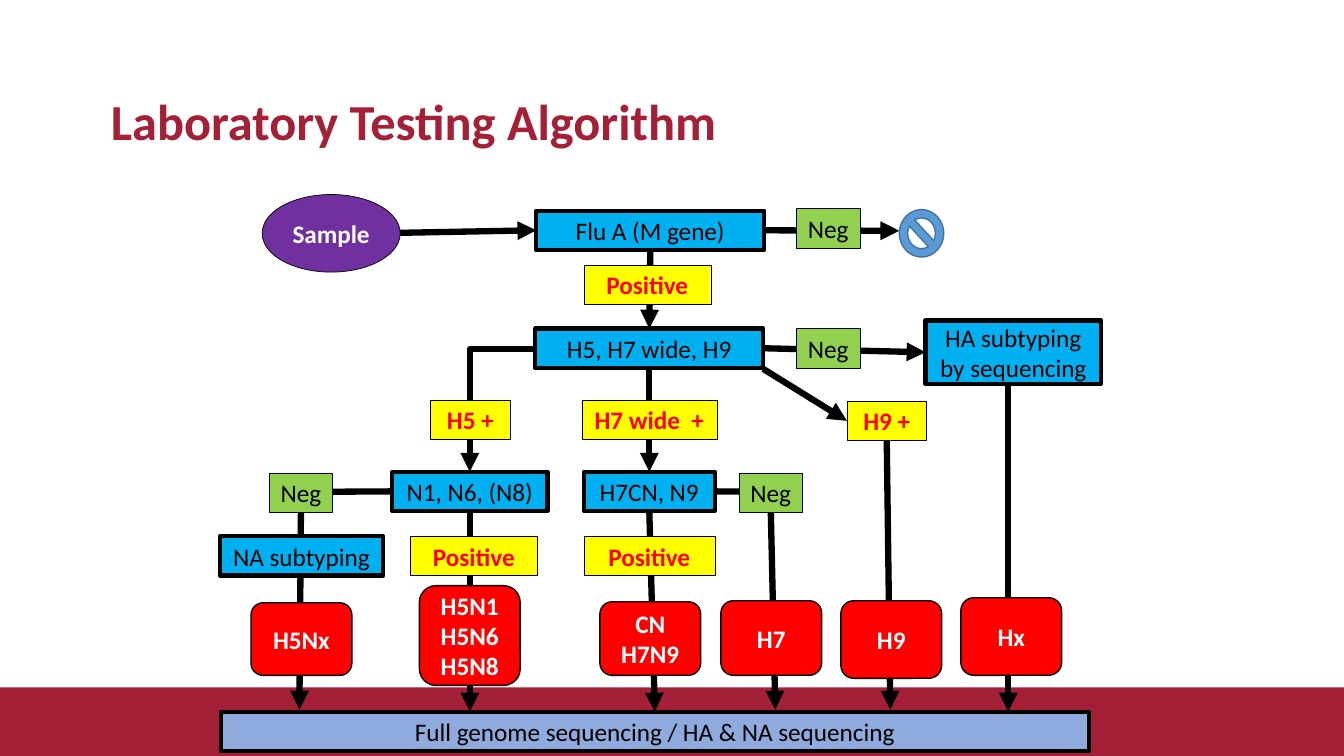
from lxml import etree
from pptx import Presentation
from pptx.dml.color import RGBColor
from pptx.enum.shapes import MSO_CONNECTOR as CONN, MSO_SHAPE as SHAPE
from pptx.enum.text import MSO_ANCHOR as ANCHOR, PP_ALIGN as ALIGN
from pptx.oxml.ns import qn
from pptx.util import Inches, Pt

CRIMSON = RGBColor(0xA4, 0x20, 0x36)
BLACK = RGBColor(0x00, 0x00, 0x00)
WHITE = RGBColor(0xFF, 0xFF, 0xFF)
RED = RGBColor(0xFF, 0x00, 0x00)
YELLOW = RGBColor(0xFF, 0xFF, 0x00)
GREEN = RGBColor(0x92, 0xD0, 0x50)
CYAN = RGBColor(0x00, 0xB0, 0xF0)
PERIWINKLE = RGBColor(0x8F, 0xAA, 0xDC)
PURPLE = RGBColor(0x70, 0x30, 0xA0)
BLUE = RGBColor(0x5B, 0x9B, 0xD5)
NAVY = RGBColor(0x43, 0x73, 0x9E)

TOP, LEFT, BOTTOM, RIGHT = range(4)
ROW_H = 0.39


def write(tf, text, size=18, color=BLACK, bold=False, align=ALIGN.CENTER, spacing=None):
    tf.word_wrap = True
    tf.vertical_anchor = ANCHOR.MIDDLE
    for i, line in enumerate(text.split("\n")):
        p = tf.paragraphs[0] if i == 0 else tf.add_paragraph()
        p.alignment = align
        p.line_spacing = spacing
        r = p.add_run()
        r.text = line
        r.font.name = "Calibri"
        r.font.size = Pt(size)
        r.font.bold = bold
        r.font.color.rgb = color


class FlowSlide:
    def __init__(self, prs):
        self.s = prs.slides.add_slide(prs.slide_layouts[5])
        self.band = self.shape(SHAPE.RECTANGLE, 0, 6.82, 13.33, 0.68, CRIMSON)

    def title(self, text):
        sp = self.s.shapes.title
        sp.left, sp.top, sp.width, sp.height = map(Inches, (1, 0.89, 9, 0.69))
        write(sp.text_frame, text, size=36, color=CRIMSON, bold=True,
              align=ALIGN.LEFT, spacing=0.9)

    def shape(self, kind, x, y, w, h, fill, line=None, width=1, text="", **fmt):
        sp = self.s.shapes.add_shape(kind, *map(Inches, (x, y, w, h)))
        sp.shadow.inherit = False
        sp.fill.solid()
        sp.fill.fore_color.rgb = fill
        if line is None:
            sp.line.fill.background()
        else:
            sp.line.color.rgb = line
            sp.line.width = Pt(width)
        if text:
            write(sp.text_frame, text, **fmt)
        return sp

    def test(self, text, x, y, w, h=ROW_H, fill=CYAN):
        return self.shape(SHAPE.RECTANGLE, x, y, w, h, fill, BLACK, 3, text)

    def positive(self, text, x, y, w):
        return self.shape(SHAPE.RECTANGLE, x, y, w, ROW_H, YELLOW, BLACK, 0.25, text,
                          color=RED, bold=True)

    def negative(self, x, y):
        return self.shape(SHAPE.RECTANGLE, x, y, 0.63, ROW_H, GREEN, BLACK, 0.25, "Neg")

    def result(self, text, x, y, h):
        return self.shape(SHAPE.ROUNDED_RECTANGLE, x, y, 1, h, RED, BLACK, 1, text,
                          color=WHITE, bold=True)

    def arrow(self, start, end, kind=CONN.STRAIGHT):
        points = [(0, 0) if hasattr(e[0], "shape_id") else e for e in (start, end)]
        c = self.s.shapes.add_connector(kind, *[Inches(v) for pt in points for v in pt])
        if hasattr(start[0], "shape_id"):
            c.begin_connect(*start)
        if hasattr(end[0], "shape_id"):
            c.end_connect(*end)
        c.line.color.rgb = BLACK
        c.line.width = Pt(4.5)
        etree.SubElement(c.line._get_or_add_ln(), qn("a:tailEnd"), type="triangle")
        etree.SubElement(c._element.spPr, qn("a:effectLst"))
        self.band._element.addnext(c._element)
        return c

    def elbow(self, start, end):
        c = self.arrow(start, end, CONN.ELBOW)
        c._element.spPr.find(qn("a:prstGeom")).set("prst", "bentConnector2")


def main():
    prs = Presentation()
    prs.slide_width, prs.slide_height = Inches(13.33), Inches(7.5)
    flow = FlowSlide(prs)
    flow.title("Laboratory Testing Algorithm")

    flow.shape(SHAPE.OVAL, 2.6, 1.93, 1.37, 0.77, PURPLE, BLACK, 0.5, "Sample",
               color=WHITE, bold=True)
    flow.shape(SHAPE.NO_SYMBOL, 8.92, 2.08, 0.44, 0.47, BLUE, NAVY)

    flu_a = flow.test("Flu A (M gene)", 5.32, 2.09, 2.26)
    h_types = flow.test("H5, H7 wide, H9", 5.31, 3.26, 2.26)
    n_types = flow.test("N1, N6, (N8)", 3.89, 4.68, 1.54)
    h7_types = flow.test("H7CN, N9", 5.79, 4.68, 1.3)
    flow.test("NA subtyping", 2.18, 5.32, 1.62)
    ha_subtyping = flow.test("HA subtyping\nby sequencing", 9.18, 3.18, 1.74, 0.63)
    genome = flow.test("Full genome sequencing / HA & NA sequencing",
                       2.19, 7.06, 8.61, fill=PERIWINKLE)

    for text, x, y, w in [("Positive", 5.79, 2.63, 1.26), ("Positive", 5.79, 5.32, 1.3),
                          ("Positive", 4.07, 5.32, 1.26), ("H5 +", 4.27, 3.97, 0.79),
                          ("H7 wide  +", 5.77, 3.97, 1.34)]:
        flow.positive(text, x, y, w)
    h9_pos = flow.positive("H9 +", 8.4, 3.98, 0.79)

    for y in (2.07, 3.26):
        flow.negative(7.9, y)
    h5_neg, h7_neg = [flow.negative(x, 4.69) for x in (2.67, 7.33)]

    for text, x, y, h in [("H5Nx", 2.49, 5.98, 0.72), ("H5N1\nH5N6\nH5N8", 4.16, 5.81, 0.99),
                          ("CN\nH7N9", 5.95, 5.97, 0.73), ("H7", 7.15, 5.96, 0.74),
                          ("H9", 8.34, 5.96, 0.77), ("Hx", 9.53, 5.93, 0.77)]:
        flow.result(text, x, y, h)

    for start, end in [((3.96, 2.31), (flu_a, LEFT)),
                       ((flu_a, RIGHT), (8.92, 2.29)),
                       ((flu_a, BOTTOM), (h_types, TOP)),
                       ((h_types, BOTTOM), (h7_types, TOP)),
                       ((h_types, RIGHT), (ha_subtyping, LEFT)),
                       ((7.57, 3.66), (h9_pos, LEFT)),
                       ((n_types, LEFT), (2.97, 4.88)),
                       ((h7_types, RIGHT), (7.69, 4.88)),
                       ((h5_neg, BOTTOM), (2.97, 7.04)),
                       ((n_types, BOTTOM), (4.66, 7.06)),
                       ((h7_types, BOTTOM), (genome, TOP)),
                       ((h7_neg, BOTTOM), (7.69, 7.04)),
                       ((h9_pos, BOTTOM), (8.83, 7.04)),
                       ((10, 3.67), (10, 7.06))]:
        flow.arrow(start, end)
    flow.elbow((5.31, 3.46), (4.66, 4.68))

    prs.save("out.pptx")


if __name__ == "__main__":
    main()
